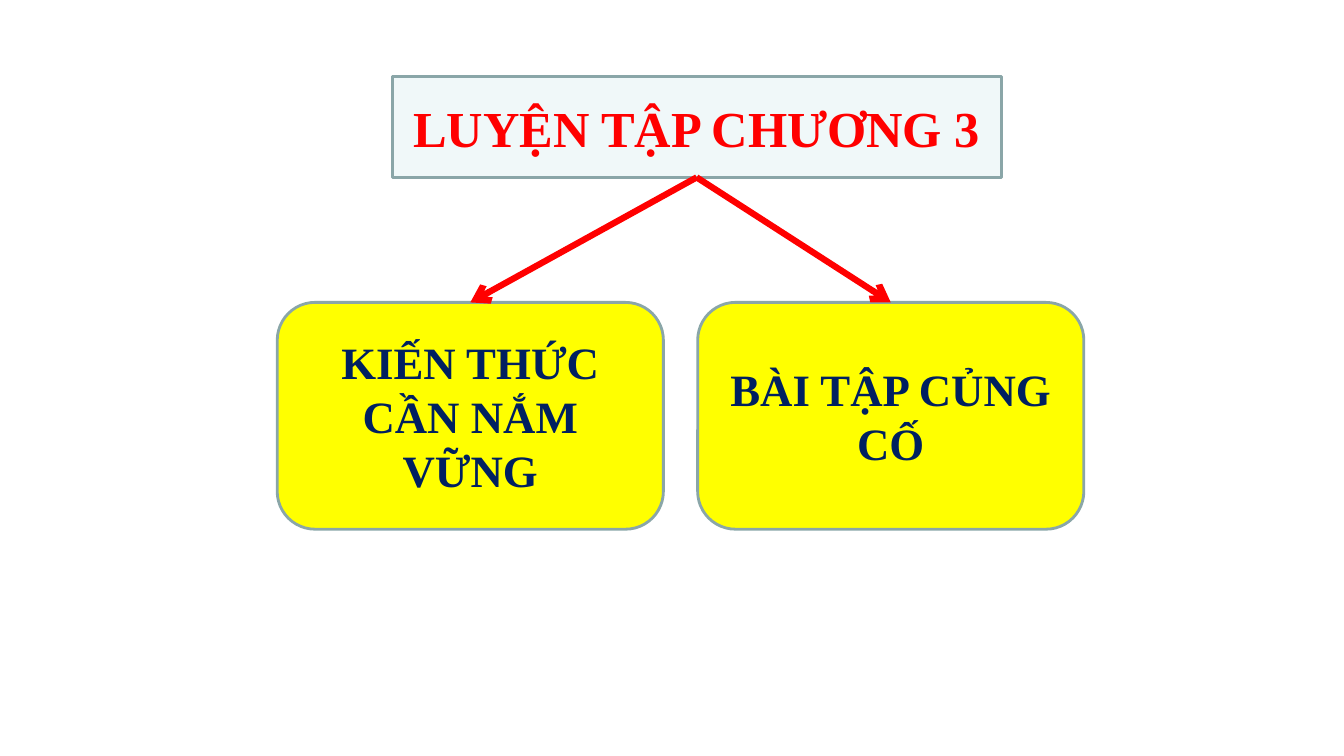
from lxml.etree import SubElement
from pptx import Presentation
from pptx.dml.color import RGBColor
from pptx.enum.shapes import MSO_CONNECTOR, MSO_SHAPE
from pptx.enum.text import MSO_ANCHOR, MSO_AUTO_SIZE, PP_ALIGN
from pptx.oxml.ns import qn
from pptx.util import Inches, Pt

FONT = "Times New Roman"
RED = RGBColor(0xFF, 0x00, 0x00)
NAVY = RGBColor(0x00, 0x20, 0x60)
YELLOW = RGBColor(0xFF, 0xFF, 0x00)
PALE_BLUE = RGBColor(0xF0, 0xF8, 0xF9)
GREY_TEAL = RGBColor(0x8A, 0xA6, 0xA8)

TOPICS = ["KIẾN THỨC CẦN NẮM VỮNG", "BÀI TẬP CỦNG CỐ"]
TOPIC_LEFT, TOPIC_STEP = 2.75, 4.17
BOTTOM_SITE, TOP_SITE = 2, 0


def set_text(sp, text, *, size, color):
    tf = sp.text_frame
    tf.word_wrap = True
    tf.auto_size = MSO_AUTO_SIZE.NONE
    tf.vertical_anchor = MSO_ANCHOR.MIDDLE
    p = tf.paragraphs[0]
    p.alignment = PP_ALIGN.CENTER
    r = p.add_run()
    r.text = text
    r.font.name = FONT
    r.font.size = Pt(size)
    r.font.bold = True
    r.font.color.rgb = color


def set_box(sp, fill):
    sp.fill.solid()
    sp.fill.fore_color.rgb = fill
    sp.line.color.rgb = GREY_TEAL
    sp.line.width = Pt(2)
    sp.shadow.inherit = False


def add_title(s, text):
    sp = s.shapes.title
    sp.left, sp.top = Inches(3.89), Inches(0.76)
    sp.width, sp.height = Inches(6.04), Inches(1)
    set_box(sp, PALE_BLUE)
    set_text(sp, text, size=36, color=RED)
    return sp


def add_topic(s, text, left):
    sp = s.shapes.add_shape(MSO_SHAPE.ROUNDED_RECTANGLE, Inches(left),
                            Inches(3), Inches(3.83), Inches(2.25))
    set_box(sp, YELLOW)
    set_text(sp, text, size=32, color=NAVY)
    return sp


def add_arrow(s, start, end):
    cxn = s.shapes.add_connector(MSO_CONNECTOR.STRAIGHT, 0, 0, 0, 0)
    cxn.begin_connect(start, BOTTOM_SITE)
    cxn.end_connect(end, TOP_SITE)
    cxn.line.color.rgb = RED
    cxn.line.width = Pt(4.5)
    SubElement(cxn.line._get_or_add_ln(), qn("a:tailEnd"), type="arrow")
    SubElement(cxn._element.spPr, qn("a:effectLst"))


def main():
    prs = Presentation()
    prs.slide_width, prs.slide_height = Inches(13.33), Inches(7.5)
    s = prs.slides.add_slide(prs.slide_layouts[5])
    title = add_title(s, "LUYỆN TẬP CHƯƠNG 3")
    topics = [add_topic(s, text, TOPIC_LEFT + i * TOPIC_STEP)
              for i, text in enumerate(TOPICS)]
    for topic in topics:
        add_arrow(s, title, topic)
    prs.save("out.pptx")


if __name__ == "__main__":
    main()
